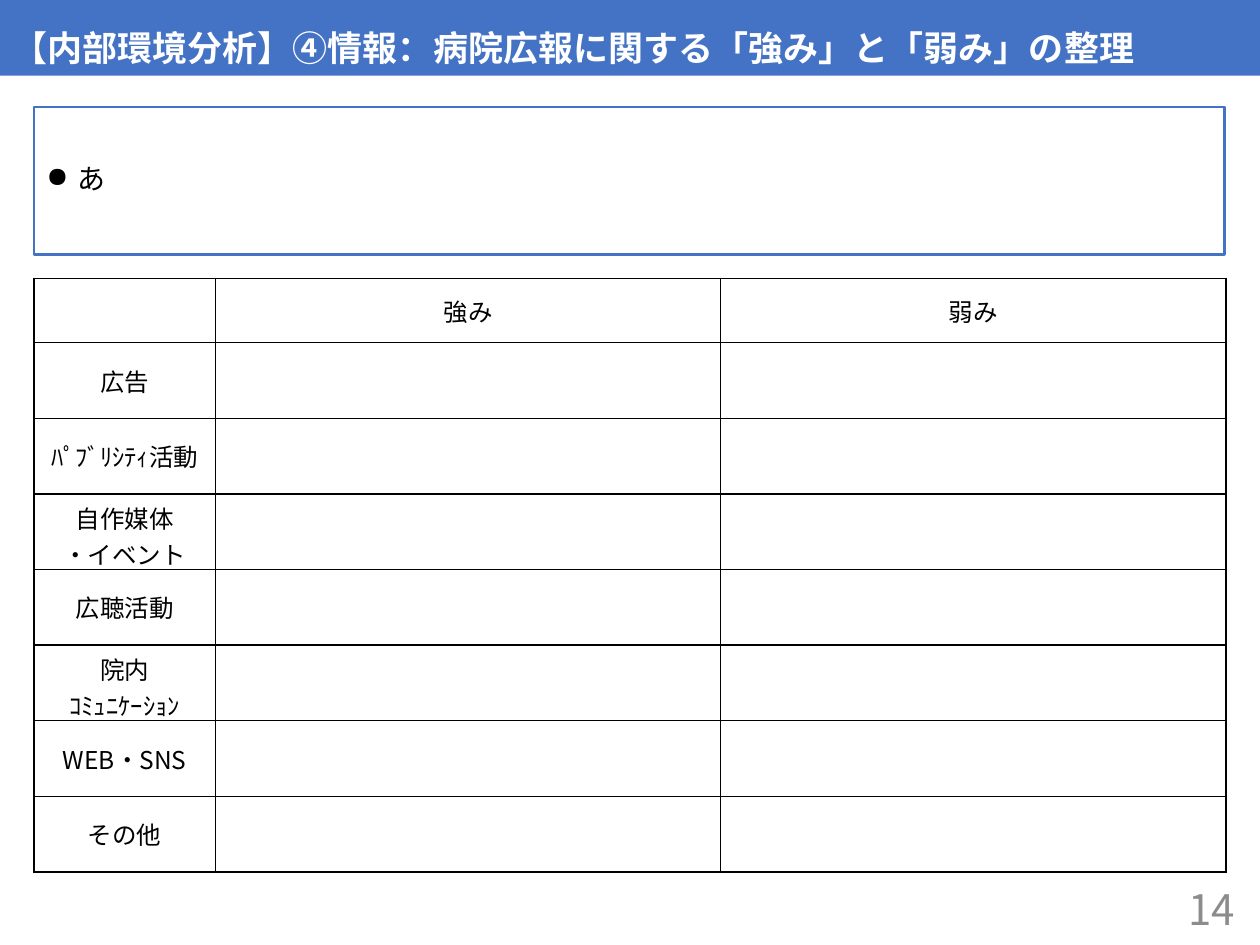
from dataclasses import dataclass

from lxml.etree import SubElement
from pptx import Presentation
from pptx.dml.color import RGBColor
from pptx.enum.shapes import MSO_SHAPE
from pptx.enum.text import MSO_ANCHOR, PP_ALIGN
from pptx.oxml.ns import qn
from pptx.util import Inches, Pt


@dataclass(frozen=True)
class Theme:
    font: str = "Noto Sans CJK JP"
    accent: str = "4472C4"
    paper: str = "FFFFFF"
    ink: str = "000000"
    muted: str = "8C8C8C"
    title_size: int = 20
    body_size: int = 16
    table_size: int = 14
    number_size: int = 24
    box_line: float = 1.5
    grid_line: float = 1


class SlideBuilder:
    def __init__(self, slide, theme):
        self.slide = slide
        self.theme = theme

    def set_text(self, frame, text, size, color, align=PP_ALIGN.LEFT,
                 anchor=MSO_ANCHOR.MIDDLE, bold=False, line_spacing=None):
        frame.text = text
        frame.word_wrap = True
        frame.vertical_anchor = anchor
        for paragraph in frame.paragraphs:
            paragraph.alignment = align
            paragraph.line_spacing = line_spacing
            for run in paragraph.runs:
                font = run.font
                font.size = Pt(size)
                font.bold = bold
                font.color.rgb = RGBColor.from_string(color)
                font.name = self.theme.font
                # Japanese glyphs take the East Asian typeface
                SubElement(run._r.get_or_add_rPr(), qn("a:ea"), typeface=self.theme.font)

    def rectangle(self, box, fill, line=None):
        shape = self.slide.shapes.add_shape(MSO_SHAPE.RECTANGLE, *map(Inches, box))
        shape.shadow.inherit = False
        shape.fill.solid()
        shape.fill.fore_color.rgb = RGBColor.from_string(fill)
        if line:
            shape.line.color.rgb = RGBColor.from_string(line)
            shape.line.width = Pt(self.theme.box_line)
        else:
            shape.line.fill.background()
        return shape

    def title_bar(self, box, text):
        bar = self.rectangle(box, self.theme.accent)
        self.set_text(bar.text_frame, text, self.theme.title_size, self.theme.paper,
                      anchor=MSO_ANCHOR.BOTTOM, bold=True, line_spacing=0.9)

    def bullet_box(self, box, text):
        frame = self.rectangle(box, self.theme.paper, self.theme.accent).text_frame
        self.set_text(frame, text, self.theme.body_size, self.theme.ink, line_spacing=0.9)
        for paragraph in frame.paragraphs:
            properties = paragraph._p.get_or_add_pPr()
            properties.set("marL", str(Inches(0.25)))
            properties.set("indent", str(Inches(-0.25)))
            SubElement(properties, qn("a:buChar"), char="●")

    def page_number(self, box, number):
        label = self.slide.shapes.add_textbox(*map(Inches, box))
        self.set_text(label.text_frame, number, self.theme.number_size,
                      self.theme.muted, align=PP_ALIGN.RIGHT)

    def border(self, cell):
        properties = cell._tc.get_or_add_tcPr()
        for index, side in enumerate(("a:lnL", "a:lnR", "a:lnT", "a:lnB")):
            line = SubElement(properties, qn(side), w=str(Pt(self.theme.grid_line)))
            SubElement(SubElement(line, qn("a:solidFill")), qn("a:srgbClr"),
                       val=self.theme.ink)
            properties.remove(line)
            properties.insert(index, line)  # borders precede the cell fill

    def grid(self, left, top, widths, heights, rows):
        table = self.slide.shapes.add_table(
            len(rows), len(widths), Inches(left), Inches(top),
            Inches(sum(widths)), Inches(sum(heights))).table
        for column, width in zip(table.columns, widths):
            column.width = Inches(width)
        for row, height, texts in zip(table.rows, heights, rows):
            row.height = Inches(height)
            for cell, text in zip(row.cells, texts):
                cell.fill.solid()
                cell.fill.fore_color.rgb = RGBColor.from_string(self.theme.paper)
                self.border(cell)
                cell.vertical_anchor = MSO_ANCHOR.MIDDLE
                if text:
                    self.set_text(cell.text_frame, text, self.theme.table_size,
                                  self.theme.ink, align=PP_ALIGN.CENTER, anchor=None)


def main():
    presentation = Presentation()
    presentation.slide_width = Inches(10)
    presentation.slide_height = Inches(7.5)
    slide = presentation.slides.add_slide(presentation.slide_layouts[6])
    builder = SlideBuilder(slide, Theme())

    builder.title_bar((0, 0, 10, 0.6),
                      "【内部環境分析】④情報：病院広報に関する「強み」と「弱み」の整理")
    builder.page_number((7.65, 7.01, 2.25, 0.4), "14")
    builder.bullet_box((0.27, 0.85, 9.45, 1.17), "あ")

    activities = ["広告", "ﾊﾟﾌﾞﾘｼﾃｨ活動", "自作媒体\n・イベント", "広聴活動",
                  "院内\nｺﾐｭﾆｹｰｼｮﾝ", "WEB・SNS", "その他"]
    rows = [("", "強み", "弱み")] + [(activity, "", "") for activity in activities]
    builder.grid(0.27, 2.21, widths=[1.44, 4.01, 4.01],
                 heights=[0.51] + [0.6] * len(activities), rows=rows)

    presentation.save("out.pptx")


if __name__ == "__main__":
    main()
